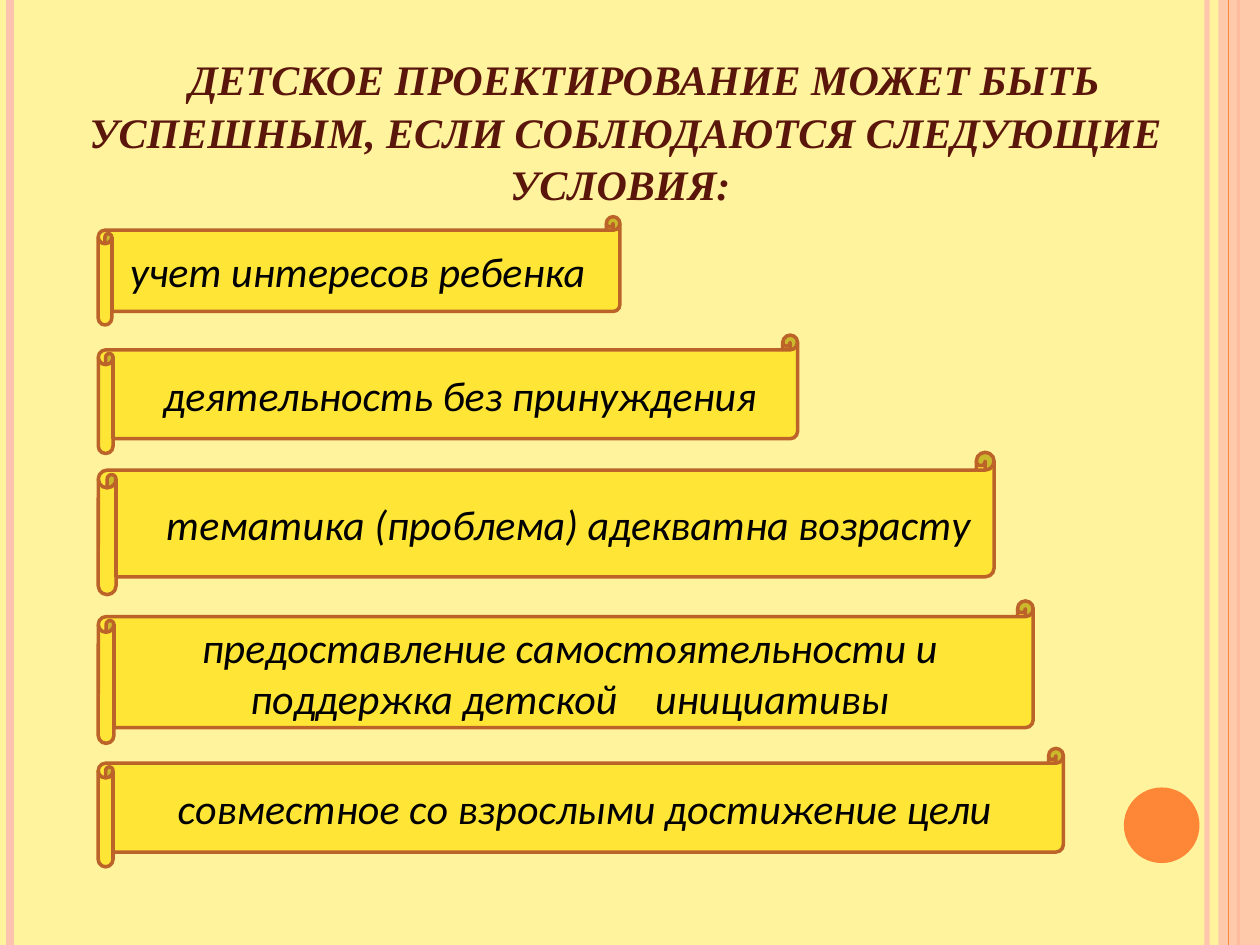
import pptx
import pptx.util
import pptx.dml.color
import pptx.enum.shapes
import pptx.enum.text
import pptx.oxml
import pptx.oxml.ns
import lxml.etree

Pt = pptx.util.Pt
Kind = pptx.enum.shapes.MSO_SHAPE
Align = pptx.enum.text.PP_ALIGN
Anchor = pptx.enum.text.MSO_ANCHOR

INKS = {"paper": "FFF39D", "peach": "FEC3AE", "orange": "FE8637",
        "title": "5A160B", "scroll": "FFE636", "edge": "BC6329",
        "text": "000000"}
COLS, ROWS = 100, 75  # grid of the slide
SIZE = 24


class Deck:
    def __init__(self):
        self.prs = pptx.Presentation()
        self.prs.slide_width = pptx.util.Inches(10)
        self.prs.slide_height = pptx.util.Inches(7.5)
        self.slide = self.prs.slides.add_slide(self.prs.slide_layouts[5])
        self.tint(self.slide.background.fill, "paper")

    def x(self, cols):
        return round(self.prs.slide_width * cols / COLS)

    def y(self, rows):
        return round(self.prs.slide_height * rows / ROWS)

    def box(self, left, top, width, height):
        return self.x(left), self.y(top), self.x(width), self.y(height)

    def tint(self, fill, ink, alpha=None):
        fill.solid()
        fill.fore_color.rgb = pptx.dml.color.RGBColor.from_string(INKS[ink])
        if alpha:
            tag = fill._xPr.find(".//" + pptx.oxml.ns.qn("a:srgbClr"))
            part = lxml.etree.SubElement(tag, pptx.oxml.ns.qn("a:alpha"))
            part.set("val", str(alpha * 1000))

    def rule(self, col, ink, width, alpha=None):
        line = self.slide.shapes.add_connector(
            pptx.enum.shapes.MSO_CONNECTOR.STRAIGHT,
            self.x(col), 0, self.x(col), self.y(ROWS))
        line.line.width = Pt(width)
        self.tint(line.line.fill, ink, alpha)
        lxml.etree.SubElement(line._element.spPr,
                              pptx.oxml.ns.qn("a:effectLst"))

    def shape(self, kind, spot, ink, alpha=None, edge=None):
        item = self.slide.shapes.add_shape(kind, *self.box(*spot))
        item.shadow.inherit = False
        self.tint(item.fill, ink, alpha)
        if edge:
            item.line.width = Pt(2)
            self.tint(item.line.fill, edge)
        else:
            item.line.fill.background()
        return item

    def run(self, para, text, font, ink, bold=False, gap=0):
        run = para.add_run()
        run.text = text
        run.font.name = font
        run.font.size = Pt(SIZE)
        run.font.bold = bold
        run.font.italic = True
        self.tint(run.font.fill, ink)
        if gap:
            run.font._element.set("spc", str(gap * 100))

    def dent(self, para):
        props = para._p.get_or_add_pPr()
        props.set("marL", "0")
        props.set("indent", str(self.x(3)))

    def title(self, spot, text):
        item = self.slide.shapes.title
        item.left, item.top, item.width, item.height = self.box(*spot)
        frame = item.text_frame
        frame.word_wrap = True
        frame.auto_size = pptx.enum.text.MSO_AUTO_SIZE.NONE
        frame.vertical_anchor = Anchor.TOP
        frame.margin_top = self.y(1)
        para = frame.paragraphs[0]
        para.alignment = Align.CENTER
        para.line_spacing = 1.04
        self.dent(para)
        self.run(para, text, "Times New Roman", "title", bold=True)

    def scroll(self, top, width, height, runs, dent=False, curl=None):
        item = self.shape(Kind.HORIZONTAL_SCROLL, (7.8, top, width, height),
                          "scroll", edge="edge")
        if curl:
            item.adjustments[0] = curl
        frame = item.text_frame
        frame.word_wrap = True
        frame.vertical_anchor = Anchor.MIDDLE
        para = frame.paragraphs[0]
        para.alignment = Align.LEFT if dent else Align.CENTER
        if dent:
            self.dent(para)
        for text, gap in runs:
            self.run(para, text, "Calibri", "text", gap=gap)


def main():
    deck = Deck()

    # Side stripes and dot
    deck.rule(95.8, "peach", 3, 93)
    deck.rule(0.8, "peach", 4.5)
    deck.rule(98.3, "orange", 1.5)
    deck.shape(Kind.RECTANGLE, (96.7, 0, 3.3, ROWS), "peach", 87)
    deck.rule(97.5, "orange", 0.75)
    deck.shape(Kind.OVAL, (89.2, 62.5, 6, 6), "orange")

    # Heading
    deck.title((5.5, 3.1, 88.3, 61.6),
               "ДЕТСКОЕ ПРОЕКТИРОВАНИЕ МОЖЕТ БЫТЬ УСПЕШНЫМ, "
               "ЕСЛИ СОБЛЮДАЮТСЯ СЛЕДУЮЩИЕ УСЛОВИЯ: ")

    # Conditions, each as runs of text and extra spacing
    deck.scroll(17.2, 41.4, 8.6, [("учет интересов ребенка ", 0)])
    deck.scroll(26.6, 55.5, 9.4, [("деятельность без принуждения", 0)],
                dent=True)
    deck.scroll(35.9, 71.1, 11.3,
                [("тематика (проблема) адекватна возрасту", 0)], dent=True)
    deck.scroll(47.7, 74.2, 11.3,
                [("предоставление самостоятельности и поддержка детской", 0),
                 (" ", 16), ("инициативы", 0)], curl=0.11)
    deck.scroll(59.4, 76.6, 9.4,
                [("совместное со взрослыми достижение цели", 0)])

    deck.prs.save("out.pptx")


if __name__ == "__main__":
    main()
